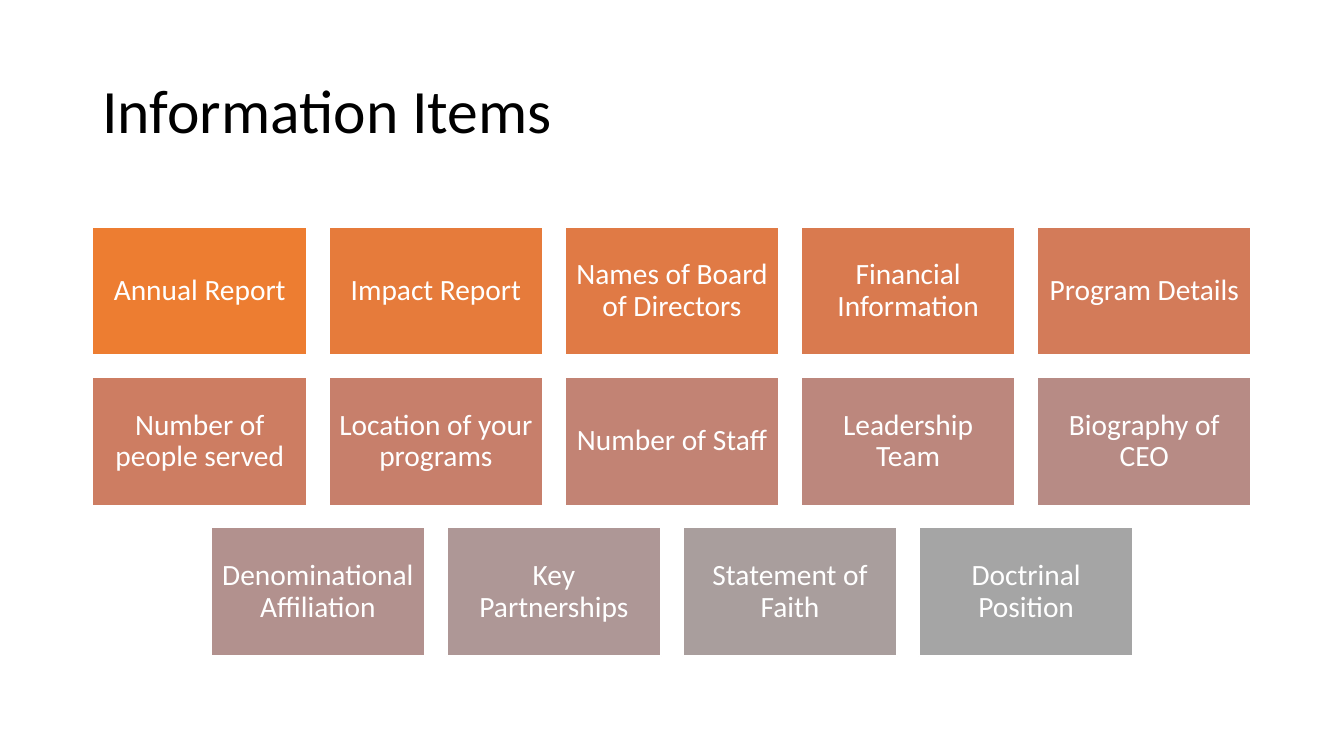
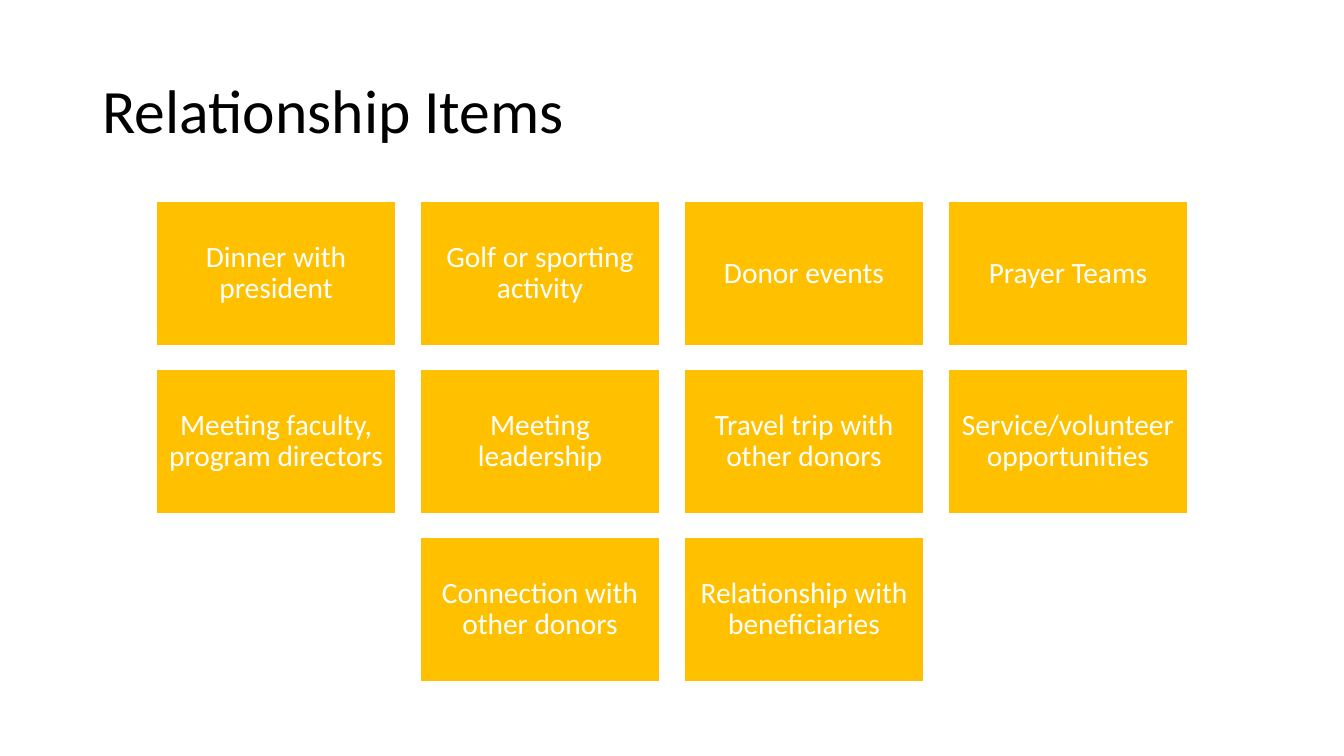
from colorsys import hls_to_rgb, rgb_to_hls

from pptx import Presentation
from pptx.dml.color import RGBColor
from pptx.enum.shapes import MSO_SHAPE as Shape
from pptx.enum.text import MSO_ANCHOR as Anchor, MSO_AUTO_SIZE as AutoSize, PP_ALIGN as Align
from pptx.util import Pt

COLORS = {
    "title": "000000",
    "white": "FFFFFF",
    "orange": "ED7D31",
    "gray": "A5A5A5",
    "gold": "FFC000",
}
FONT = "Calibri"
SLIDE_WIDTH, SLIDE_HEIGHT = 960, 540
TITLE_BOX = (66, 28.75, 828, 104.4)
GAP_RATIO = 0.1
HEIGHT_RATIO = 0.6

INFORMATION_ITEMS = [
    "Annual Report", "Impact Report", "Names of Board of Directors",
    "Financial Information", "Program Details", "Number of people served",
    "Location of your programs", "Number of Staff", "Leadership Team",
    "Biography of CEO", "Denominational Affiliation", "Key Partnerships",
    "Statement of Faith", "Doctrinal Position",
]
RELATIONSHIP_ITEMS = [
    "Dinner with president", "Golf or sporting activity", "Donor events",
    "Prayer Teams", "Meeting faculty, program directors", "Meeting leadership",
    "Travel trip with other donors", "Service/volunteer opportunities",
    "Connection with other donors", "Relationship with beneficiaries",
]


def color_ramp(start, end, count):
    """Return hex colours evenly spaced in hue, lightness and saturation."""
    first, last = (
        rgb_to_hls(*(channel / 255 for channel in RGBColor.from_string(color)))
        for color in (start, end)
    )
    ramp = []
    for index in range(count):
        share = index / max(count - 1, 1)
        mixed = (a + (b - a) * share for a, b in zip(first, last))
        ramp.append(str(RGBColor(*(round(c * 255) for c in hls_to_rgb(*mixed)))))
    return ramp


def write_text(shape, text, size, color, align=Align.LEFT, inset=None):
    """Fill a shape with one formatted, vertically centred paragraph."""
    frame = shape.text_frame
    frame.word_wrap = True
    frame.auto_size = AutoSize.NONE
    frame.vertical_anchor = Anchor.MIDDLE
    if inset is not None:
        frame.margin_left = frame.margin_right = Pt(inset)
        frame.margin_top = frame.margin_bottom = Pt(inset)
    frame.text = text
    paragraph = frame.paragraphs[0]
    paragraph.alignment = align
    paragraph.line_spacing = 0.9
    font = paragraph.runs[0].font
    font.name = FONT
    font.size = Pt(size)
    font.color.rgb = RGBColor.from_string(color)


def add_titled_slide(presentation, title):
    """Add a title-only slide with the shared title style."""
    slide = presentation.slides.add_slide(presentation.slide_layouts[5])
    shape = slide.shapes.title
    shape.left, shape.top, shape.width, shape.height = map(Pt, TITLE_BOX)
    write_text(shape, title, size=44, color=COLORS["title"])
    return slide


def add_tile(slide, text, box, fill, line_width):
    """Add one filled rectangle with a centred label."""
    tile = slide.shapes.add_shape(Shape.RECTANGLE, *map(Pt, box))
    tile.shadow.inherit = False
    tile.fill.solid()
    tile.fill.fore_color.rgb = RGBColor.from_string(fill)
    tile.line.color.rgb = RGBColor.from_string(COLORS["white"])
    tile.line.width = Pt(line_width)
    write_text(tile, text, size=21, color=COLORS["white"], align=Align.CENTER, inset=6.3)


def add_tile_grid(slide, items, fills, columns, top, tile_width, line_width):
    """Lay tiles out in rows, each row centred on the slide."""
    gap = tile_width * GAP_RATIO
    tile_height = tile_width * HEIGHT_RATIO
    for index, (text, fill) in enumerate(zip(items, fills)):
        row, column = divmod(index, columns)
        row_count = min(columns, len(items) - row * columns)
        row_width = row_count * (tile_width + gap) - gap
        left = (SLIDE_WIDTH - row_width) / 2 + column * (tile_width + gap)
        box = (left, top + row * (tile_height + gap), tile_width, tile_height)
        add_tile(slide, text, box, fill, line_width)


def main():
    """Build and save both slides."""
    presentation = Presentation()
    presentation.slide_width = Pt(SLIDE_WIDTH)
    presentation.slide_height = Pt(SLIDE_HEIGHT)

    information = add_titled_slide(presentation, "Information Items")
    ramp = color_ramp(COLORS["orange"], COLORS["gray"], len(INFORMATION_ITEMS))
    add_tile_grid(information, INFORMATION_ITEMS, ramp,
                  columns=5, top=162, tile_width=153.33, line_width=1.5)

    relationship = add_titled_slide(presentation, "Relationship Items")
    golds = [COLORS["gold"]] * len(RELATIONSHIP_ITEMS)
    add_tile_grid(relationship, RELATIONSHIP_ITEMS, golds,
                  columns=4, top=144, tile_width=171.4, line_width=1)

    presentation.save("out.pptx")


if __name__ == "__main__":
    main()
